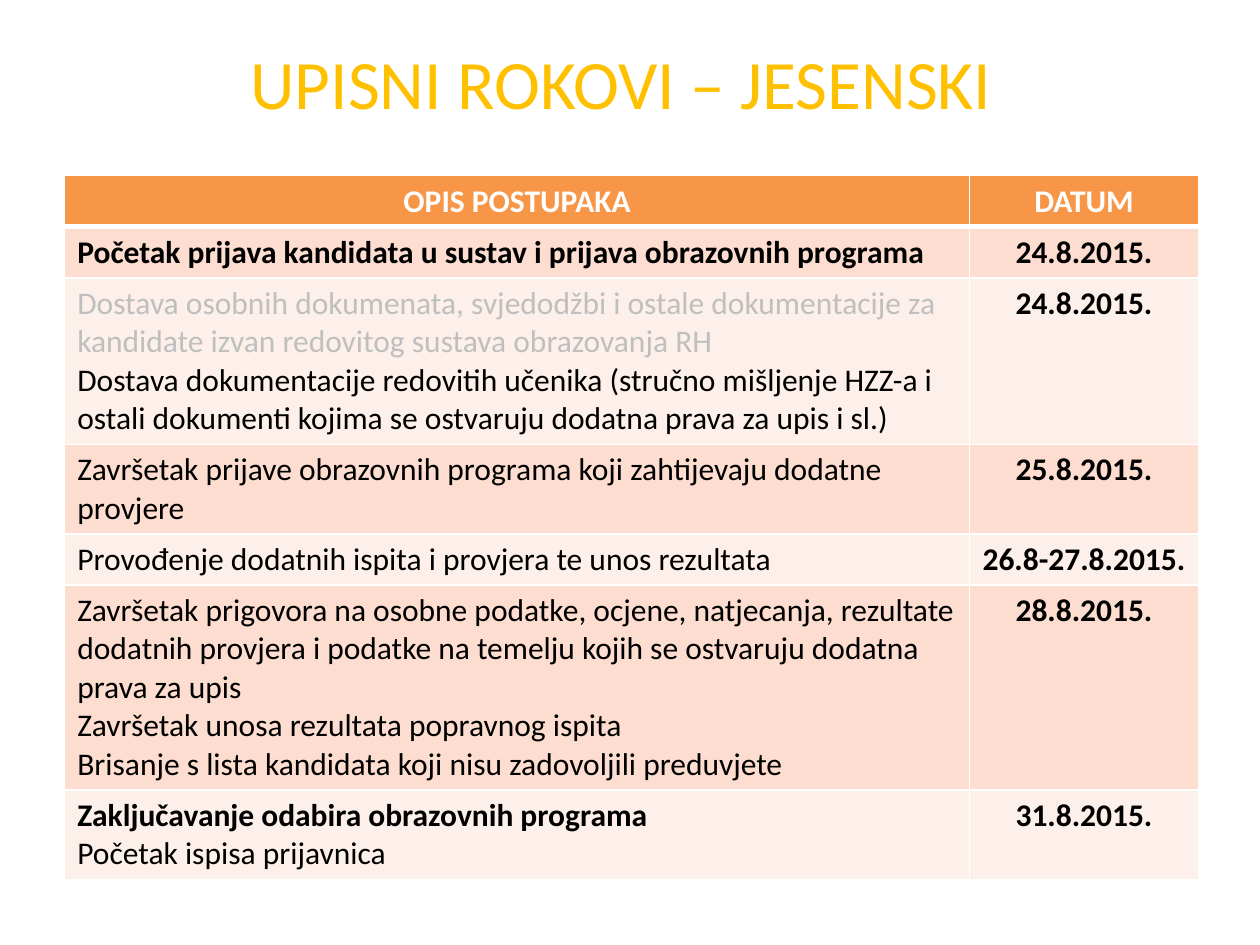
import pptx
import pptx.dml.color
import pptx.enum.text
import pptx.oxml
import pptx.oxml.ns
import pptx.util
from lxml import etree

Pt = pptx.util.Pt
ALIGN = pptx.enum.text.PP_ALIGN
ANCHOR = pptx.enum.text.MSO_ANCHOR
WHITE, BLACK, GREY = "FFFFFF", "000000", "BFBFBF"
GOLD, ORANGE = "FFC000", "F79646"
BANDS = ("FCDDCF", "FDEFE9")
LINE_HEIGHT, CELL_PADDING = 22, 7.2


def color(value):
    return pptx.dml.color.RGBColor.from_string(value)


class Deck:
    font = "Calibri"

    def __init__(self, width, height):
        self.presentation = pptx.Presentation()
        self.presentation.slide_width = Pt(width)
        self.presentation.slide_height = Pt(height)

    def new_slide(self):
        layout = self.presentation.slide_layouts[5]
        self.slide = self.presentation.slides.add_slide(layout)

    def add_text(self, frame, paragraphs, size, align):
        for index, (text, hue, bold) in enumerate(paragraphs):
            paragraph = frame.paragraphs[0] if index == 0 else frame.add_paragraph()
            paragraph.alignment = align
            run = paragraph.add_run()
            run.text = text
            run.font.name = self.font
            run.font.size = Pt(size)
            run.font.bold = bold
            run.font.color.rgb = color(hue)

    def title(self, text, left, top, width, height):
        heading = self.slide.shapes.title
        heading.left, heading.top = Pt(left), Pt(top)
        heading.width, heading.height = Pt(width), Pt(height)
        heading.text_frame.vertical_anchor = ANCHOR.MIDDLE
        heading.text_frame.auto_size = pptx.enum.text.MSO_AUTO_SIZE.NONE
        self.add_text(heading.text_frame, [(text, GOLD, False)], 39.6, ALIGN.CENTER)

    def borders(self, cell, top, bottom):
        properties = cell._tc.get_or_add_tcPr()
        sides = (("lnL", 1), ("lnR", 1), ("lnT", top), ("lnB", bottom))
        for index, (side, width) in enumerate(sides):
            line = etree.Element(pptx.oxml.ns.qn(f"a:{side}"), w=str(Pt(width)))
            fill = etree.SubElement(line, pptx.oxml.ns.qn("a:solidFill"))
            etree.SubElement(fill, pptx.oxml.ns.qn("a:srgbClr"), val=WHITE)
            properties.insert(index, line)

    def cell(self, cell, paragraphs, fill, align, top, bottom):
        cell.fill.solid()
        cell.fill.fore_color.rgb = color(fill)
        self.add_text(cell.text_frame, paragraphs, 18, align)
        self.borders(cell, top, bottom)

    def schedule(self, header, steps, left, top, widths):
        heights = [CELL_PADDING + LINE_HEIGHT * lines
                   for lines in [1] + [step[2] for step in steps]]
        table = self.slide.shapes.add_table(
            len(heights), len(widths), Pt(left), Pt(top),
            Pt(sum(widths)), Pt(sum(heights))).table
        for column, width in zip(table.columns, widths):
            column.width = Pt(width)
        for row, height in zip(table.rows, heights):
            row.height = Pt(height)
        for column, label in enumerate(header):
            self.cell(table.cell(0, column), [(label, WHITE, True)],
                      ORANGE, ALIGN.CENTER, 1, 3)
        for row, (description, date, _) in enumerate(steps, 1):
            band = BANDS[(row - 1) % 2]
            top_line = 3 if row == 1 else 1
            self.cell(table.cell(row, 0), description, band, ALIGN.LEFT, top_line, 1)
            self.cell(table.cell(row, 1), [(date, BLACK, True)],
                      band, ALIGN.CENTER, top_line, 1)


STEPS = [
    ([("Početak prijava kandidata u sustav i prijava obrazovnih programa", BLACK, True)],
     "24.8.2015.", 1),
    ([("Dostava osobnih dokumenata, svjedodžbi i ostale dokumentacije za kandidate "
       "izvan redovitog sustava obrazovanja RH", GREY, False),
      ("Dostava dokumentacije redovitih učenika (stručno mišljenje HZZ-a i ostali "
       "dokumenti kojima se ostvaruju dodatna prava za upis i sl.)", BLACK, False)],
     "24.8.2015.", 4),
    ([("Završetak prijave obrazovnih programa koji zahtijevaju dodatne provjere",
       BLACK, False)],
     "25.8.2015.", 2),
    ([("Provođenje dodatnih ispita i provjera te unos rezultata", BLACK, False)],
     "26.8-27.8.2015.", 1),
    ([("Završetak prigovora na osobne podatke, ocjene, natjecanja, rezultate dodatnih "
       "provjera i podatke na temelju kojih se ostvaruju dodatna prava za upis",
       BLACK, False),
      ("Završetak unosa rezultata popravnog ispita", BLACK, False),
      ("Brisanje s lista kandidata koji nisu zadovoljili preduvjete", BLACK, False)],
     "28.8.2015.", 5),
    ([("Zaključavanje odabira obrazovnih programa", BLACK, True),
      ("Početak ispisa prijavnica", BLACK, False)],
     "31.8.2015.", 2),
]


def main():
    deck = Deck(720, 540)
    deck.new_slide()
    deck.title("UPISNI ROKOVI – JESENSKI", 31, 21, 648, 51)
    deck.schedule(("OPIS POSTUPAKA", "DATUM"), STEPS, 37, 100.4, (517, 131))
    deck.presentation.save("out.pptx")


if __name__ == "__main__":
    main()
